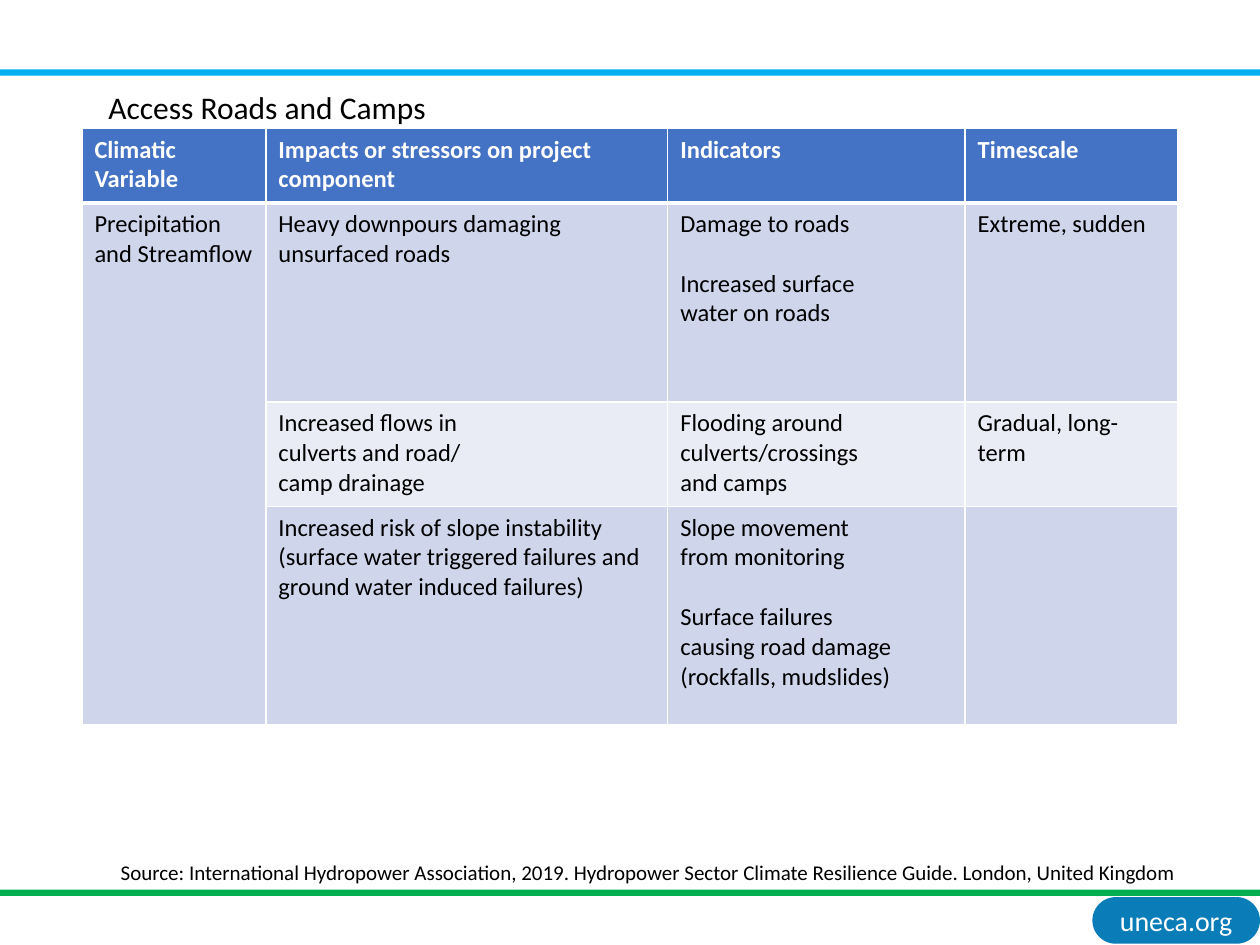
from lxml import etree
from pptx import Presentation
from pptx.dml.color import RGBColor
from pptx.enum.shapes import MSO_SHAPE
from pptx.enum.text import MSO_ANCHOR, MSO_AUTO_SIZE, PP_ALIGN
from pptx.oxml.ns import qn
from pptx.util import Inches, Pt

RECTANGLE, ROUNDED = MSO_SHAPE.RECTANGLE, MSO_SHAPE.ROUNDED_RECTANGLE
TOP, MIDDLE = MSO_ANCHOR.TOP, MSO_ANCHOR.MIDDLE
LEFT, CENTER = PP_ALIGN.LEFT, PP_ALIGN.CENTER
NO_RESIZE = MSO_AUTO_SIZE.NONE

WHITE = RGBColor(0xFF, 0xFF, 0xFF)
BLACK = RGBColor(0, 0, 0)
SKY = RGBColor(0x00, 0xB0, 0xF0)
GREEN = RGBColor(0x00, 0xB0, 0x50)
BADGE_BLUE = RGBColor(0x0A, 0x7C, 0xB8)
HEADER_BLUE = RGBColor(0x44, 0x72, 0xC4)
BAND_DARK = RGBColor(0xCF, 0xD5, 0xEA)
BAND_LIGHT = RGBColor(0xE9, 0xEB, 0xF5)

FONT = "Calibri"
LINE_GAP = Pt(17)
COLUMN_WIDTHS = (1.46, 3.19, 2.36, 1.69)
ROW_HEIGHTS = (0.59, 1.58, 0.83, 1.73)
ROW_FILLS = (HEADER_BLUE, BAND_DARK, BAND_LIGHT, BAND_DARK)

# Each cell is a list of groups set apart by a gap; a group is a list of lines
ROWS = (
    ([["Climatic Variable"]],
     [["Impacts or stressors on project component"]],
     [["Indicators"]],
     [["Timescale"]]),
    ([["Precipitation and Streamflow"]],
     [["Heavy downpours damaging", "unsurfaced roads"]],
     [["Damage to roads"], ["Increased surface", "water on roads"]],
     [["Extreme, sudden"]]),
    ([],
     [["Increased flows in", "culverts and road/", "camp drainage"]],
     [["Flooding around", "culverts/crossings", "and camps"]],
     [["Gradual, long-term"]]),
    ([],
     [["Increased risk of slope instability (surface water triggered "
       "failures and ground water induced failures)"]],
     [["Slope movement", "from monitoring"],
      ["Surface failures", "causing road damage", "(rockfalls, mudslides)"]],
     []),
)


def style(para, size, color, bold=False, align=LEFT):
    para.alignment = align
    font = para.font
    font.name, font.size, font.bold = FONT, Pt(size), bold
    font.color.rgb = color


def add_block(page, kind, box, color):
    shape = page.shapes.add_shape(kind, *map(Inches, box))
    shape.shadow.inherit = False
    shape.fill.solid()
    shape.fill.fore_color.rgb = color
    shape.line.fill.background()
    return shape


def add_badge(page, box):
    badge = add_block(page, ROUNDED, box, BADGE_BLUE)
    badge.adjustments[0] = 0.5
    frame = badge.text_frame
    frame.margin_left = frame.margin_right = Inches(0.05)
    frame.margin_top = frame.margin_bottom = Inches(0.05)
    frame.vertical_anchor = MIDDLE
    frame.text = "uneca.org"
    style(frame.paragraphs[0], 16, WHITE, align=CENTER)


def place_title(page, box):
    title = page.shapes.title
    title.left, title.top, title.width, title.height = map(Inches, box)
    frame = title.text_frame
    frame.text = "Access Roads and Camps"
    frame.word_wrap = False
    frame.auto_size = NO_RESIZE
    frame.vertical_anchor = TOP
    style(frame.paragraphs[0], 18, BLACK)


def set_borders(cell, top, bottom):
    properties = cell._tc.get_or_add_tcPr()
    sides = (("a:lnL", 1), ("a:lnR", 1), ("a:lnT", top), ("a:lnB", bottom))
    # Borders come before the fill
    for index, (tag, width) in enumerate(sides):
        line = etree.Element(qn(tag), w=str(Pt(width)))
        fill = etree.SubElement(line, qn("a:solidFill"))
        etree.SubElement(fill, qn("a:srgbClr"), val=str(WHITE))
        properties.insert(index, line)


def fill_cell(cell, groups, color, bold):
    frame = cell.text_frame
    para = frame.paragraphs[0]
    style(para, 14, color, bold)
    lines = [(line, group_index > 0 and line_index == 0)
             for group_index, group in enumerate(groups)
             for line_index, line in enumerate(group)]
    for index, (line, starts_group) in enumerate(lines):
        if index:
            para = frame.add_paragraph()
        para.text = line
        if starts_group:
            para.space_before = LINE_GAP
        style(para, 14, color, bold)


def add_impact_table(page, left, top):
    table = page.shapes.add_table(
        len(ROWS), len(COLUMN_WIDTHS), Inches(left), Inches(top),
        Inches(sum(COLUMN_WIDTHS)), Inches(sum(ROW_HEIGHTS))).table
    for column, width in zip(table.columns, COLUMN_WIDTHS):
        column.width = Inches(width)
    for row_index, texts in enumerate(ROWS):
        table.rows[row_index].height = Inches(ROW_HEIGHTS[row_index])
        header = row_index == 0
        for column_index, groups in enumerate(texts):
            cell = table.cell(row_index, column_index)
            # The first column keeps one colour down its merged cell
            merged = column_index == 0 and not header
            cell.fill.solid()
            cell.fill.fore_color.rgb = BAND_DARK if merged else ROW_FILLS[row_index]
            fill_cell(cell, groups, WHITE if header else BLACK, header)
            set_borders(cell, 3 if row_index == 1 else 1, 3 if header else 1)
    table.cell(1, 0).merge(table.cell(3, 0))


def add_source_line(page, box):
    frame = page.shapes.add_textbox(*map(Inches, box)).text_frame
    frame.word_wrap = True
    frame.text = ("Source: International Hydropower Association, 2019. Hydropower "
                  "Sector Climate Resilience Guide. London, United Kingdom")
    style(frame.paragraphs[0], 12, BLACK)


def main():
    deck = Presentation()
    deck.slide_width, deck.slide_height = Inches(10), Inches(7.5)
    page = deck.slides.add_slide(deck.slide_layouts[5])

    # Page furniture
    add_badge(page, (8.67, 7.12, 1.33, 0.37))
    add_block(page, RECTANGLE, (0, 0.55, 10, 0.05), SKY)
    add_block(page, RECTANGLE, (0, 7.06, 10, 0.05), GREEN)

    # Content
    add_impact_table(page, 0.65, 1.02)
    place_title(page, (0.76, 0.65, 2.75, 0.4))
    add_source_line(page, (0.86, 6.77, 9.3, 0.3))
    deck.save("out.pptx")


if __name__ == "__main__":
    main()
